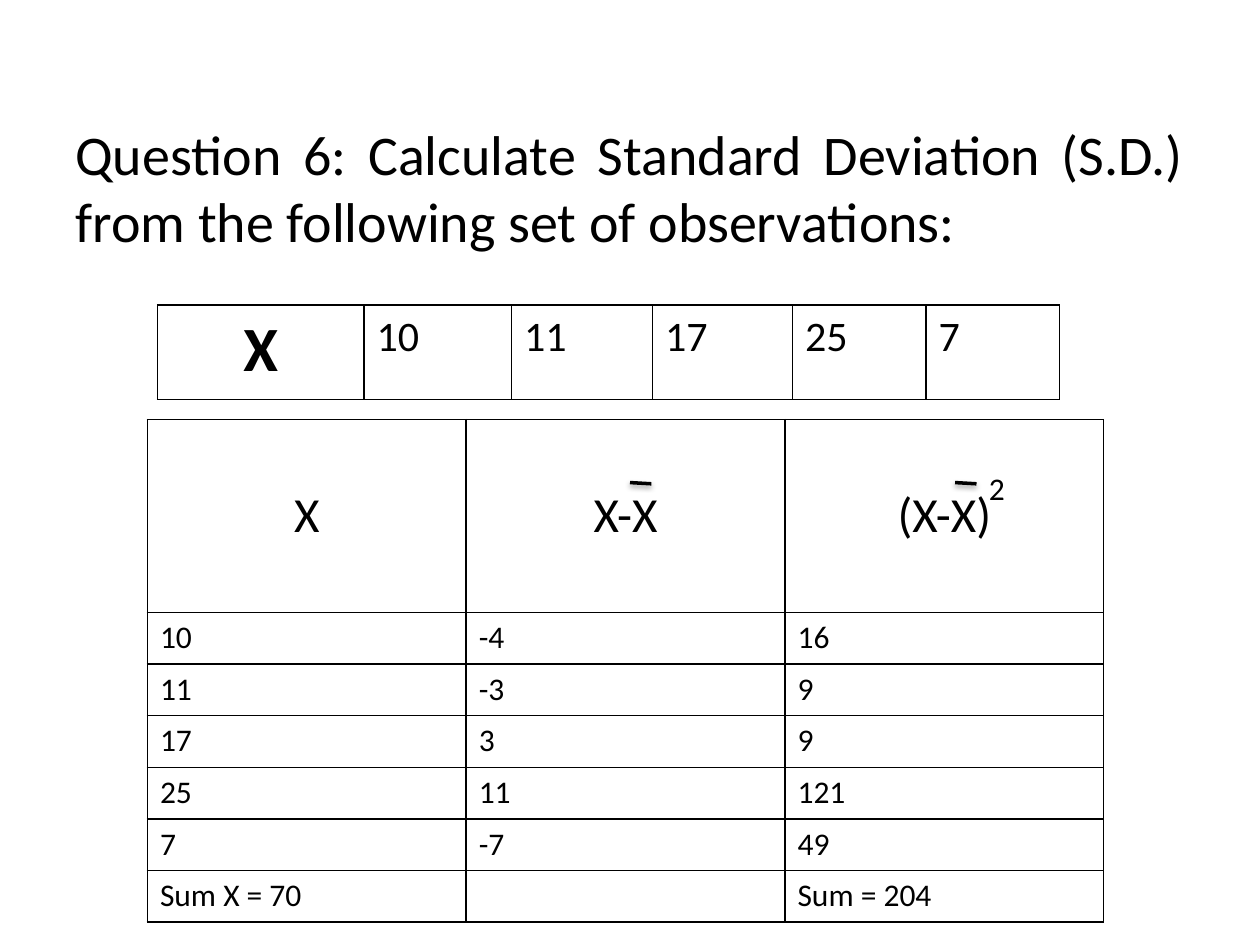
"""Build a slide that works out a standard deviation in two tables."""
from dataclasses import dataclass
from typing import Sequence

import lxml.etree
import pptx
import pptx.dml.color
import pptx.enum.shapes
import pptx.enum.text
import pptx.oxml
import pptx.oxml.ns
import pptx.util

Inches = pptx.util.Inches
Pt = pptx.util.Pt
Align = pptx.enum.text.PP_ALIGN
Anchor = pptx.enum.text.MSO_ANCHOR


@dataclass(frozen=True)
class Theme:
    font: str = "Calibri"
    ink: str = "000000"
    title: int = 32
    mark: int = 36
    data: int = 24
    head: int = 28
    body: int = 18
    edge: int = 1
    bar: int = 2


@dataclass(frozen=True)
class Cell:
    text: str
    size: int
    bold: bool = False
    align: Align = Align.LEFT
    anchor: Anchor = Anchor.TOP


@dataclass(frozen=True)
class Grid:
    left: float
    top: float
    cols: Sequence[float]
    rows: Sequence[float]
    cells: Sequence[Sequence[Cell]]


THEME = Theme()
INK = pptx.dml.color.RGBColor.from_string(THEME.ink)


def write(frame, cell: Cell) -> None:
    frame.text = cell.text
    para = frame.paragraphs[0]
    para.alignment = cell.align
    for font in [para.font] + [run.font for run in para.runs]:
        font.name = THEME.font
        font.size = Pt(cell.size)
        font.bold = cell.bold
        font.color.rgb = INK


def edge(cell) -> None:
    props = cell._tc.get_or_add_tcPr()
    for side in ("lnL", "lnR", "lnT", "lnB"):
        props.append(pptx.oxml.parse_xml(
            f'<a:{side} {pptx.oxml.ns.nsdecls("a")} w="{Pt(THEME.edge)}">'
            f'<a:solidFill><a:srgbClr val="{THEME.ink}"/></a:solidFill></a:{side}>'))
    cell.fill.background()


def draw_grid(slide, grid: Grid) -> None:
    table = slide.shapes.add_table(
        len(grid.rows), len(grid.cols), Inches(grid.left), Inches(grid.top),
        Inches(sum(grid.cols)), Inches(sum(grid.rows))).table
    table.first_row = table.horz_banding = False
    for col, width in zip(table.columns, grid.cols):
        col.width = Inches(width)
    for row, height, items in zip(table.rows, grid.rows, grid.cells):
        row.height = Inches(height)
        for cell, item in zip(row.cells, items):
            edge(cell)
            cell.vertical_anchor = item.anchor
            write(cell.text_frame, item)


def draw_text(slide, left: float, top: float, width: float, height: float,
              item: Cell, wrap: bool, inset: float) -> None:
    frame = slide.shapes.add_textbox(
        Inches(left), Inches(top), Inches(width), Inches(height)).text_frame
    frame.word_wrap = wrap
    frame.margin_top = Inches(inset)
    write(frame, item)


def draw_bar(slide, left: float, top: float, width: float) -> None:
    bar = slide.shapes.add_connector(
        pptx.enum.shapes.MSO_CONNECTOR.STRAIGHT, Inches(left), Inches(top),
        Inches(left + width), Inches(top + 0.01))
    bar.line.color.rgb = INK
    bar.line.width = Pt(THEME.bar)
    bar._element.spPr.append(pptx.oxml.parse_xml(
        f'<a:effectLst {pptx.oxml.ns.nsdecls("a")}>'
        '<a:outerShdw blurRad="40000" dist="20000" dir="5400000" rotWithShape="0">'
        f'<a:srgbClr val="{THEME.ink}"><a:alpha val="38000"/></a:srgbClr>'
        '</a:outerShdw></a:effectLst>'))


def main() -> None:
    deck = pptx.Presentation()
    deck.slide_width, deck.slide_height = Inches(10), Inches(7.5)
    slide = deck.slides.add_slide(deck.slide_layouts[6])

    title = ("Question 6: Calculate Standard Deviation (S.D.) "
             "from the following set of observations:")
    draw_text(slide, 0.5, 0.25, 9, 6.45,
              Cell(title, THEME.title, align=Align.JUSTIFY), True, 0.7)

    data = (10, 11, 17, 25, 7)
    mean = sum(data) // len(data)
    given = [Cell("X", THEME.mark, True, Align.CENTER)]
    given += [Cell(str(num), THEME.data) for num in data]
    draw_grid(slide, Grid(1.25, 2.42, (1.64, 1.17, 1.12, 1.11, 1.06, 1.06),
                          (0.75,), [given]))

    heads = [Cell(text, THEME.head, False, Align.CENTER, Anchor.MIDDLE)
             for text in ("X", "X-X", "(X-X)")]
    lines = [(str(num), str(num - mean), str((num - mean) ** 2)) for num in data]
    total = sum((num - mean) ** 2 for num in data)
    lines.append((f"Sum X = {sum(data)}", "", f"Sum = {total}"))
    body = [[Cell(text, THEME.body) for text in line] for line in lines]
    draw_grid(slide, Grid(1.17, 3.33, (2.53,) * 3,
                          (1.53,) + (0.41,) * len(body), [heads] + body))

    for left in (5, 7.58):
        draw_bar(slide, left, 3.83, 0.17)
    draw_text(slide, 7.75, 3.67, 0.33, 0.4, Cell("2", THEME.body), False, 0.05)
    deck.save("out.pptx")


if __name__ == "__main__":
    main()
